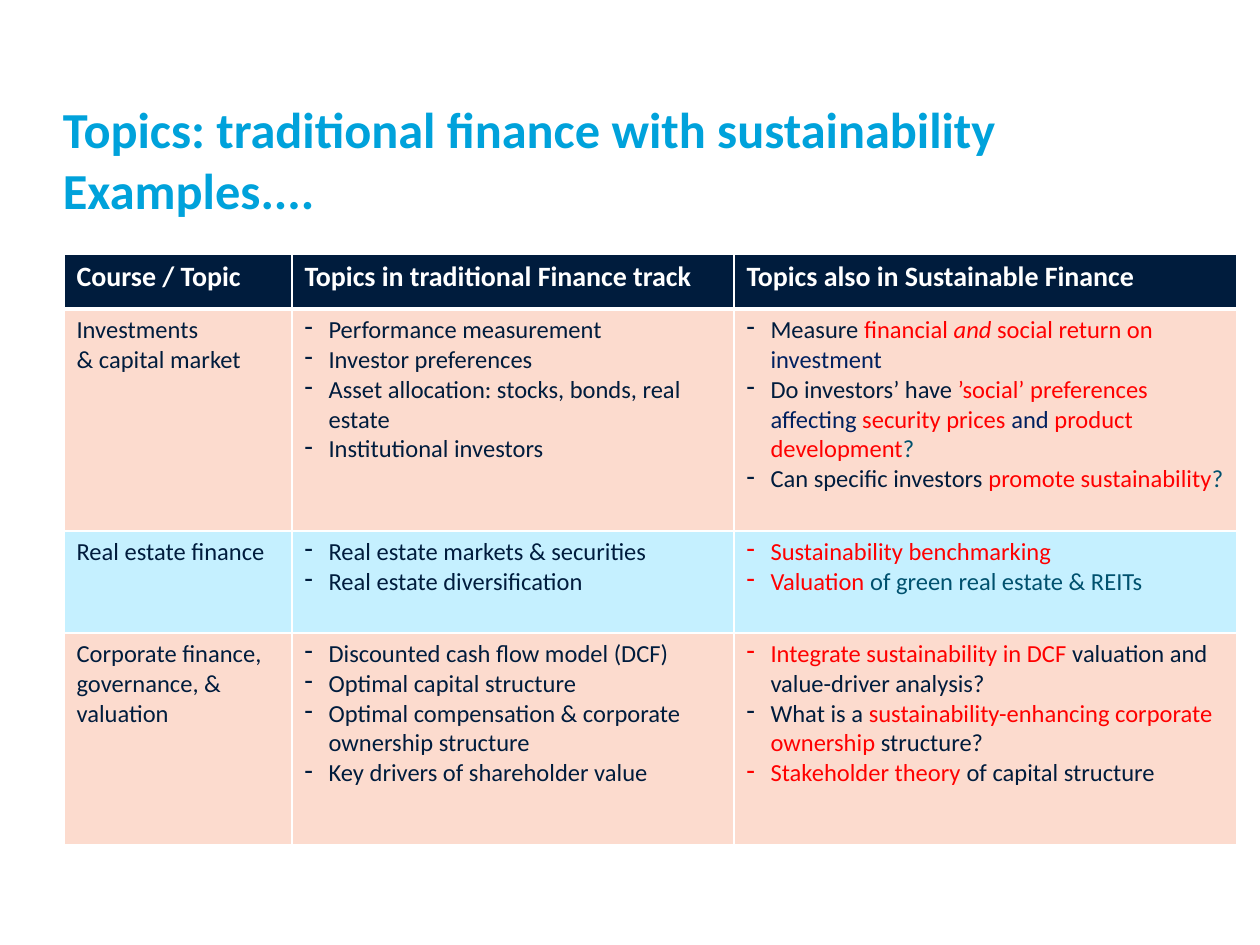
from dataclasses import dataclass

import pptx
import pptx.dml.color
import pptx.enum.text
import pptx.oxml.ns
import pptx.util
from lxml import etree

EMU_PER_PX = 914400 // 126


@dataclass(frozen=True)
class Theme:
    font: str = "Calibri"
    title: str = "00A2DB"
    ink: str = "001C3D"
    navy: str = "002060"
    teal: str = "00516E"
    red: str = "FF0000"
    white: str = "FFFFFF"
    peach: str = "FCDBCE"
    sky: str = "C5F0FF"
    title_size: float = 28.8
    header_size: int = 16
    body_size: int = 14
    rule: int = 1
    header_rule: int = 3


THEME = Theme()
INK, NAVY, TEAL, RED = THEME.ink, THEME.navy, THEME.teal, THEME.red

TITLE = "Topics: traditional finance with sustainability\vExamples...."
HEADERS = ["Course / Topic", "Topics in traditional Finance track",
           "Topics also in Sustainable Finance"]
# Each row: course lines, traditional topics, sustainable topics as coloured spans.
COURSES = [
    (["Investments", "& capital market"],
     ["Performance measurement", "Investor preferences",
      "Asset allocation: stocks, bonds, real estate", "Institutional investors"],
     [[("Measure ", INK), ("financial ", RED), ("and", RED, True),
       (" social return on ", RED), ("investment", NAVY)],
      [("Do investors’ have ", INK), ("’social’ preferences ", RED),
       ("affecting ", NAVY), ("security prices ", RED), ("and", NAVY),
       (" product development", RED), ("?", TEAL)],
      [("Can specific investors ", INK), ("promote sustainability", RED), ("?", TEAL)]]),
    (["Real estate finance"],
     ["Real estate markets & securities", "Real estate diversification"],
     [[("Sustainability benchmarking", RED)],
      [("Valuation", RED), (" of green real estate & REITs", TEAL)]]),
    (["Corporate finance, governance, & valuation"],
     ["Discounted cash flow model (DCF)", "Optimal capital structure",
      "Optimal compensation & corporate ownership structure",
      "Key drivers of shareholder value"],
     [[("Integrate sustainability in DCF", RED),
       (" valuation and value-driver analysis?", INK)],
      [("What is a ", INK), ("sustainability-enhancing corporate ownership", RED),
       (" structure?", INK)],
      [("Stakeholder theory", RED), (" of capital structure", INK)]]),
]
COLUMN_WIDTHS = [228, 442, 503]
ROW_HEIGHTS = [55, 222, 102, 212]


def px(length):
    return pptx.util.Emu(length * EMU_PER_PX)


def rgb(color):
    return pptx.dml.color.RGBColor.from_string(color)


def style(span, size, color, bold=False, italic=False):
    font = span.font
    font.name, font.size = THEME.font, pptx.util.Pt(size)
    font.bold, font.italic = bold, italic
    font.color.rgb = rgb(color)


def add_dash(para, indent=24):
    props = para._p.get_or_add_pPr()
    props.set("marL", str(px(indent)))
    props.set("indent", str(px(-indent)))
    etree.SubElement(props, pptx.oxml.ns.qn("a:buChar")).set("char", "-")


def set_borders(cell, top, bottom):
    """Draw white rules; top and bottom are widths in points."""
    props = cell._tc.get_or_add_tcPr()
    widths = {"lnL": THEME.rule, "lnR": THEME.rule, "lnT": top, "lnB": bottom}
    for side, width in widths.items():
        line = etree.SubElement(props, pptx.oxml.ns.qn("a:" + side))
        line.set("w", str(pptx.util.Pt(width)))
        fill = etree.SubElement(line, pptx.oxml.ns.qn("a:solidFill"))
        etree.SubElement(fill, pptx.oxml.ns.qn("a:srgbClr")).set("val", THEME.white)


def fill_cell(cell, lines, size, color, dashed=False, bold=False):
    """Write one paragraph per line; a line is a string or a list of spans."""
    frame = cell.text_frame
    for index, line in enumerate(lines):
        para = frame.add_paragraph() if index else frame.paragraphs[0]
        if dashed:
            add_dash(para)
        spans = [(line, color)] if isinstance(line, str) else line
        for text, *look in spans:
            span = para.add_run()
            span.text = text
            style(span, size, look[0], bold, italic=len(look) > 1)


def add_title(page, left, top, width, height):
    box = page.shapes.add_textbox(px(left), px(top), px(width), px(height))
    frame = box.text_frame
    frame.word_wrap = True
    frame.vertical_anchor = pptx.enum.text.MSO_ANCHOR.MIDDLE
    frame.margin_left = frame.margin_right = 0
    frame.margin_top = frame.margin_bottom = 0
    para = frame.paragraphs[0]
    para.text = TITLE
    for span in para.runs:
        style(span, THEME.title_size, THEME.title, bold=True)


def add_topic_table(page, left, top):
    table = page.shapes.add_table(
        len(ROW_HEIGHTS), len(COLUMN_WIDTHS), px(left), px(top),
        px(sum(COLUMN_WIDTHS)), px(sum(ROW_HEIGHTS))).table
    for column, width in zip(table.columns, COLUMN_WIDTHS):
        column.width = px(width)
    for row, height in zip(table.rows, ROW_HEIGHTS):
        row.height = px(height)

    for column, header in enumerate(HEADERS):
        cell = table.cell(0, column)
        set_borders(cell, THEME.rule, THEME.header_rule)
        cell.fill.solid()
        cell.fill.fore_color.rgb = rgb(THEME.ink)
        fill_cell(cell, [header], THEME.header_size, THEME.white, bold=True)

    for row, course in enumerate(COURSES, start=1):
        for column, lines in enumerate(course):
            cell = table.cell(row, column)
            set_borders(cell, THEME.header_rule if row == 1 else THEME.rule, THEME.rule)
            cell.fill.solid()
            cell.fill.fore_color.rgb = rgb(THEME.peach if row % 2 else THEME.sky)
            fill_cell(cell, lines, THEME.body_size, INK, dashed=column > 0)


def main():
    deck = pptx.Presentation()
    deck.slide_width, deck.slide_height = px(1260), px(945)
    page = deck.slides.add_slide(deck.slide_layouts[6])
    add_title(page, 63, 93, 1134, 132)
    add_topic_table(page, 64, 254)
    deck.save("out.pptx")


if __name__ == "__main__":
    main()
